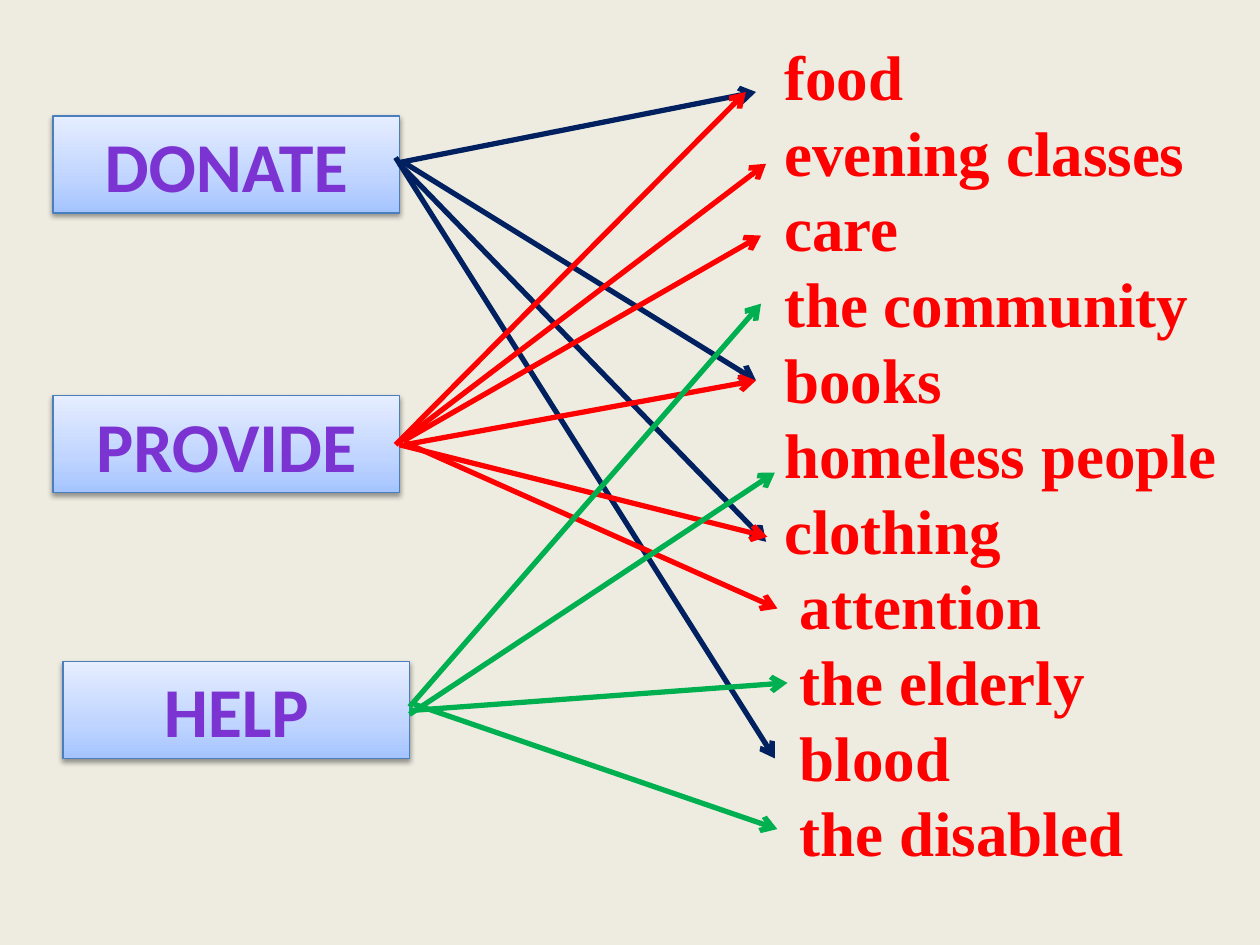
from lxml import etree
from pptx import Presentation, util as u
from pptx.dml.color import RGBColor
from pptx.enum import shapes, text
from pptx.oxml import parse_xml
from pptx.oxml.ns import nsdecls, qn

CREAM = RGBColor(0xEE, 0xEC, 0xE1)
RED = RGBColor(0xFF, 0x00, 0x00)
NAVY = RGBColor(0x00, 0x20, 0x60)
GREEN = RGBColor(0x00, 0xB0, 0x50)
PURPLE = RGBColor(0x7B, 0x34, 0xD2)
BORDER = RGBColor(0x4B, 0x7E, 0xBC)
BOX_STOPS = (
    (0, RGBColor(0xA4, 0xC4, 0xFF)),
    (35, RGBColor(0xBF, 0xD4, 0xFF)),
    (100, RGBColor(0xE6, 0xEE, 0xFF)),
)

WIDTH, HEIGHT = 10, 7.5
WORD_LEFT = 0.6 * WIDTH
WORD_PITCH = 43.2
WORD_SPACE = 0.125
BOX_SIZE = (2.75, 0.77)

# Each word with its indent, counted in spaces
WORDS = [
    ("food", 1), ("evening classes", 1), ("care", 1), ("the community", 1),
    ("books", 1), ("homeless people", 1), ("clothing", 1), ("attention", 2),
    ("the elderly", 2), ("blood", 2), ("the disabled", 2),
]

VERBS = [("DONATE", 0.42, 0.92), ("PROVIDE", 0.42, 3.14), ("HELP", 0.5, 5.25)]

# Start and end of every arrow, by the colour of its verb
ARROWS = [
    (NAVY, [
        ((3.17, 1.29), (6, 0.73)),
        ((3.19, 1.28), (6, 3.02)),
        ((3.17, 1.3), (6.08, 4.3)),
        ((3.14, 1.25), (6.15, 6.02)),
    ]),
    (RED, [
        ((3.2, 3.5), (6.04, 1.87)),
        ((3.17, 3.51), (6.08, 1.3)),
        ((3.14, 3.53), (5.92, 0.73)),
        ((3.21, 3.53), (6, 3.02)),
        ((3.17, 3.53), (6.09, 4.26)),
        ((3.21, 3.51), (6.17, 4.83)),
    ]),
    (GREEN, [
        ((3.25, 5.67), (6.15, 3.75)),
        ((3.25, 5.64), (6.25, 5.42)),
        ((3.25, 5.61), (6.04, 2.41)),
        ((3.29, 5.59), (6.17, 6.58)),
    ]),
]


def inches(*values):
    return [u.Inches(v) for v in values]


def write(p, words, *, size, font, color, bold=True, align=None,
          pitch=None, indent=0):
    r = p.add_run()
    r.text = words
    r.font.size = u.Pt(size)
    r.font.name = font
    r.font.bold = bold
    r.font.color.rgb = color
    p.alignment = align
    if pitch:
        p.line_spacing = u.Pt(pitch)
    if indent:
        p._p.get_or_add_pPr().set("marL", str(u.Inches(indent)))


def add_word_list(slide):
    sp = slide.shapes.add_textbox(
        *inches(WORD_LEFT, 0.23, WIDTH - WORD_LEFT, 6.77))
    tf = sp.text_frame
    tf.word_wrap = True
    tf.margin_top = u.Inches(0.07)
    for i, (word, spaces) in enumerate(WORDS):
        p = tf.add_paragraph() if i else tf.paragraphs[0]
        write(p, word, size=36, font="Times New Roman", color=RED,
              pitch=WORD_PITCH, indent=spaces * WORD_SPACE)


def set_box_gradient(sp):
    """Fill from the bottom up, with three stops."""
    stops = "".join(
        f'<a:gs pos="{pos * 1000}"><a:srgbClr val="{color}"/></a:gs>'
        for pos, color in BOX_STOPS)
    grad = parse_xml(
        f'<a:gradFill {nsdecls("a")} rotWithShape="1"><a:gsLst>{stops}</a:gsLst>'
        '<a:lin ang="16200000" scaled="0"/></a:gradFill>')
    sp._element.spPr.find(qn("a:prstGeom")).addnext(grad)


def set_drop_shadow(sp):
    sp.shadow.inherit = False
    effects = sp._element.spPr.find(qn("a:effectLst"))
    effects.append(parse_xml(
        f'<a:outerShdw {nsdecls("a")} blurRad="{u.Pt(3.1)}" '
        f'dist="{u.Pt(1.6)}" dir="5400000" rotWithShape="0">'
        '<a:srgbClr val="000000"><a:alpha val="38000"/></a:srgbClr>'
        '</a:outerShdw>'))


def add_verb_box(slide, verb, left, top):
    sp = slide.shapes.add_shape(
        shapes.MSO_SHAPE.RECTANGLE, *inches(left, top, *BOX_SIZE))
    set_box_gradient(sp)
    sp.line.color.rgb = BORDER
    sp.line.width = u.Pt(0.75)
    set_drop_shadow(sp)
    write(sp.text_frame.paragraphs[0], verb, size=40, font="Calibri",
          color=PURPLE, align=text.PP_ALIGN.CENTER)


def add_arrow(slide, start, end, color):
    line = slide.shapes.add_connector(
        shapes.MSO_CONNECTOR.STRAIGHT, *inches(*start, *end))
    line.line.color.rgb = color
    line.line.width = u.Pt(3)
    etree.SubElement(line.line._get_or_add_ln(), qn("a:tailEnd"), type="arrow")
    etree.SubElement(line._element.spPr, qn("a:effectLst"))


def main():
    prs = Presentation()
    prs.slide_width, prs.slide_height = inches(WIDTH, HEIGHT)
    slide = prs.slides.add_slide(prs.slide_layouts.get_by_name("Blank"))
    slide.background.fill.solid()
    slide.background.fill.fore_color.rgb = CREAM

    add_word_list(slide)
    for verb, left, top in VERBS:
        add_verb_box(slide, verb, left, top)
    for color, lines in ARROWS:
        for start, end in lines:
            add_arrow(slide, start, end, color)
    prs.save("out.pptx")


if __name__ == "__main__":
    main()
